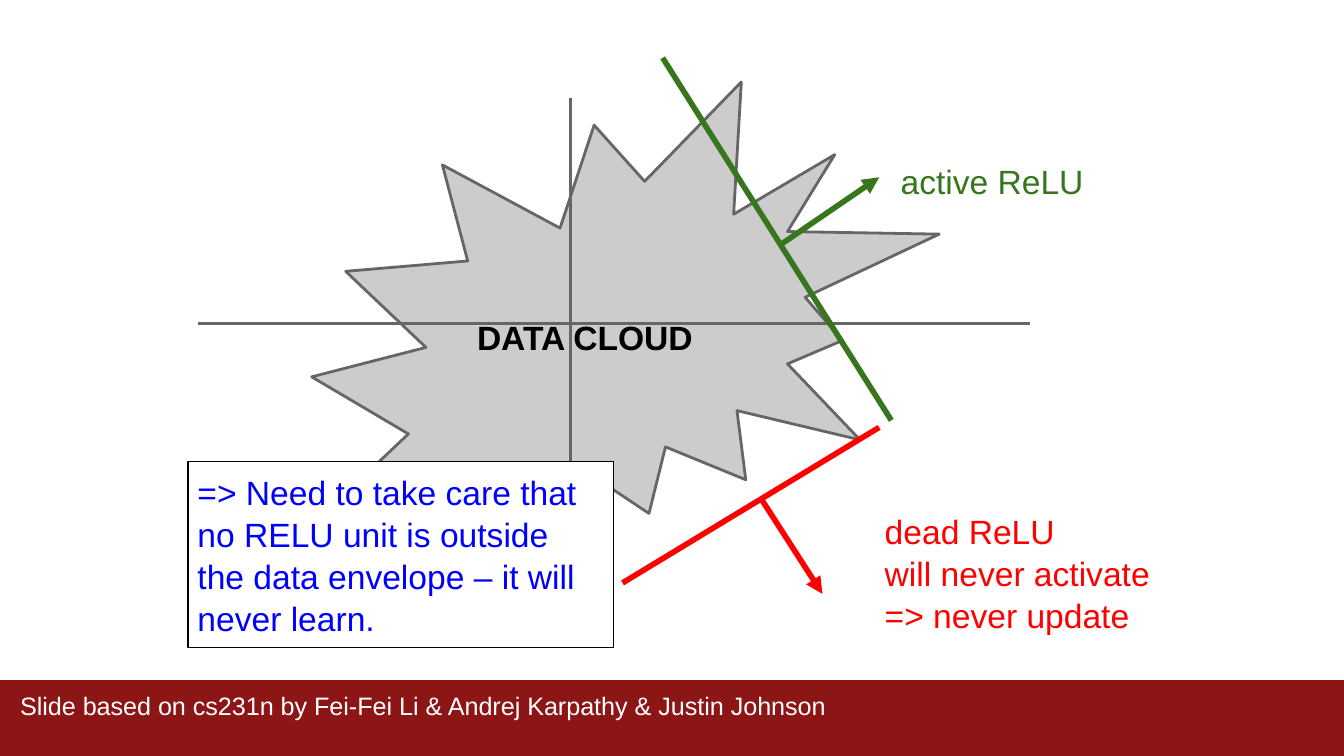
from pptx import Presentation
from pptx.dml.color import RGBColor
from pptx.enum.shapes import MSO_CONNECTOR, MSO_SHAPE
from pptx.enum.text import MSO_ANCHOR, PP_ALIGN
from pptx.oxml.ns import qn
from pptx.util import Pt
from lxml.etree import SubElement

WHITE = RGBColor(0xFF, 0xFF, 0xFF)
BLACK = RGBColor(0x00, 0x00, 0x00)
CARD = RGBColor(0x8C, 0x15, 0x15)
CLOUD = RGBColor(0xCC, 0xCC, 0xCC)
GRAY = RGBColor(0x66, 0x66, 0x66)
GREEN = RGBColor(0x38, 0x76, 0x1D)
RED = RGBColor(0xFF, 0x00, 0x00)
BLUE = RGBColor(0x00, 0x00, 0xFF)


def write(shape, text, color, size=18, bold=False, anchor=MSO_ANCHOR.TOP, space=1.04):
    """Fill a shape with left-aligned Arial text."""
    frame = shape.text_frame
    frame.text = text
    frame.word_wrap = True
    frame.vertical_anchor = anchor
    frame.margin_left = frame.margin_right = Pt(5)
    frame.margin_top = frame.margin_bottom = Pt(5)
    for para in frame.paragraphs:
        para.alignment = PP_ALIGN.LEFT
        para.line_spacing = space
        for run in para.runs:
            font = run.font
            font.name, font.size, font.bold = "Arial", Pt(size), bold
            font.color.rgb = color


def add_form(slide, kind, box, fill, edge=None, width=0.75):
    """Add a filled preset shape with an optional outline."""
    shape = slide.shapes.add_shape(kind, *map(Pt, box))
    shape.shadow.inherit = False
    shape.fill.solid()
    shape.fill.fore_color.rgb = fill
    if edge is None:
        shape.line.fill.background()
    else:
        shape.line.color.rgb = edge
        shape.line.width = Pt(width)
    return shape


def add_label(slide, box, text, color, **style):
    """Add a plain text box."""
    write(slide.shapes.add_textbox(*map(Pt, box)), text, color, **style)


def add_line(slide, start, end, color, width=3, arrow=False):
    """Add a straight line, with an arrowhead at its end if asked."""
    line = slide.shapes.add_connector(
        MSO_CONNECTOR.STRAIGHT, *map(Pt, start + end))
    line.line.color.rgb = color
    line.line.width = Pt(width)
    props = line._element.spPr
    if arrow:
        SubElement(props.find(qn("a:ln")), qn("a:tailEnd"), type="triangle")
    SubElement(props, qn("a:effectLst"))


def add_unit(slide, edge, normal, color):
    """Add the border line of a ReLU and the arrow to its active side."""
    add_line(slide, *edge, color)
    add_line(slide, *normal, color, arrow=True)


def main():
    """Build the slide and save it."""
    deck = Presentation()
    deck.slide_width, deck.slide_height = Pt(720), Pt(405)
    slide = deck.slides.add_slide(deck.slide_layouts[6])

    add_form(slide, MSO_SHAPE.RECTANGLE, (0, 364.3, 720, 41.8), CARD)
    add_label(slide, (5.8, 364.3, 705.6, 42.5),
              "Slide based on cs231n by Fei-Fei Li & Andrej Karpathy & Justin Johnson",
              WHITE, size=13.5)

    cloud = add_form(slide, MSO_SHAPE.EXPLOSION2, (167, 43.9, 336.2, 265),
                     CLOUD, GRAY, 1.5)
    write(cloud, "DATA CLOUD", BLACK, bold=True, anchor=MSO_ANCHOR.MIDDLE, space=1)
    add_line(slide, (305.5, 52.6), (305.5, 341.3), GRAY, 1.5)
    add_line(slide, (106, 173.3), (552, 173.3), GRAY, 1.5)

    add_unit(slide, ((355, 31), (477.5, 225.2)), ((418.3, 131), (471, 95)), GREEN)
    add_label(slide, (477.5, 80.6, 132.5, 54), "active ReLU", GREEN)
    add_unit(slide, ((471, 229), (333.5, 312.3)), ((407.8, 267.3), (440.6, 318.2)), RED)
    add_label(slide, (469, 267.8, 175.7, 54),
              "dead ReLU\nwill never activate\n=> never update", RED)

    note = add_form(slide, MSO_SHAPE.RECTANGLE, (100.8, 247.2, 228, 99.8), WHITE, BLACK)
    write(note, "=> Need to take care that no RELU unit is outside "
          "the data envelope – it will never learn.", BLUE)
    deck.save("out.pptx")


if __name__ == "__main__":
    main()
